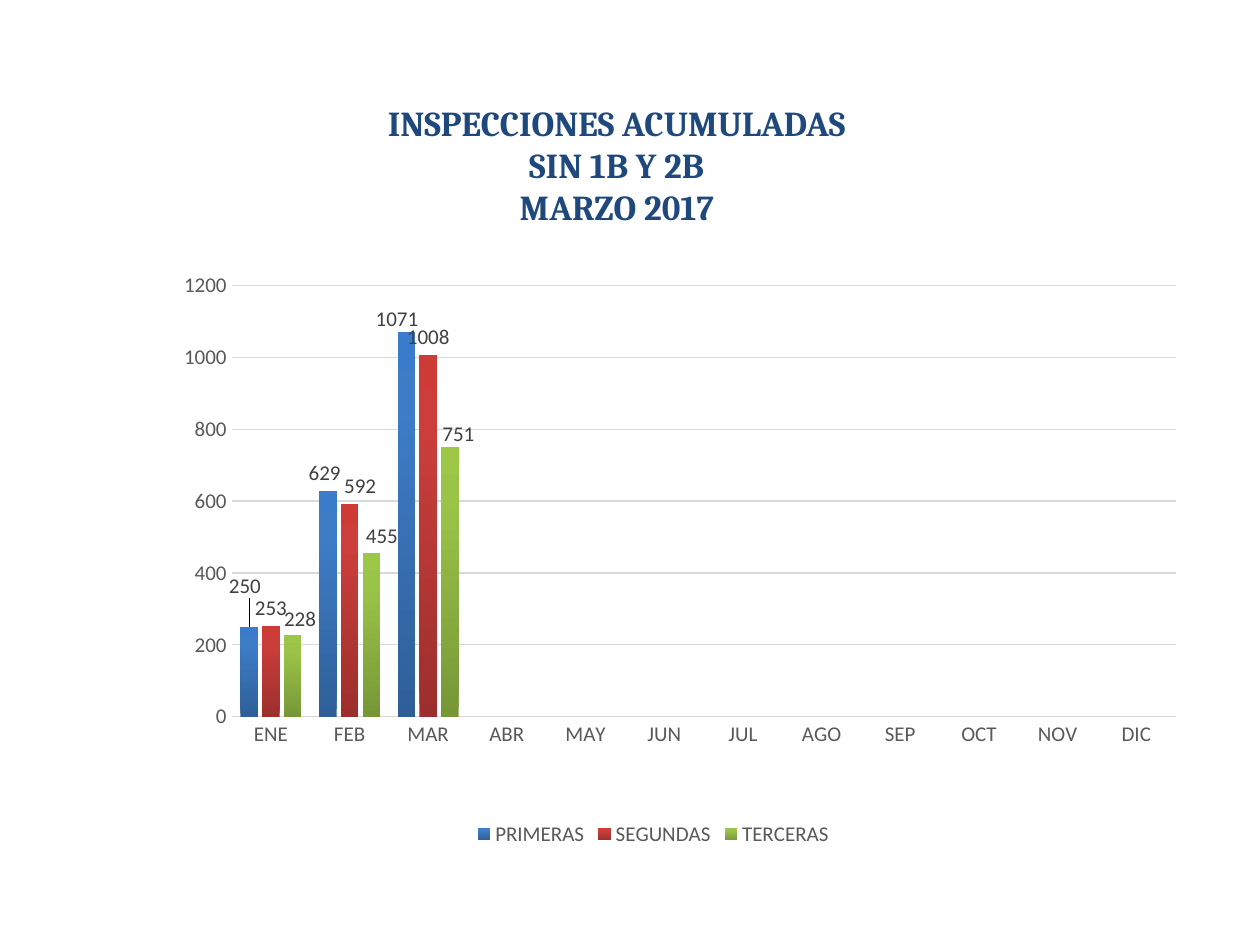
from lxml import etree
from pptx import Presentation
from pptx.chart.data import CategoryChartData
from pptx.dml.color import RGBColor
from pptx.enum.chart import XL_CHART_TYPE, XL_LABEL_POSITION, XL_LEGEND_POSITION, XL_TICK_MARK
from pptx.enum.text import PP_ALIGN
from pptx.oxml import parse_xml
from pptx.oxml.ns import nsdecls, qn
from pptx.util import Inches, Pt

COLUMN = XL_CHART_TYPE.COLUMN_CLUSTERED
OUTSIDE = XL_LABEL_POSITION.OUTSIDE_END
BOTTOM = XL_LEGEND_POSITION.BOTTOM
NO_TICK = XL_TICK_MARK.NONE
CENTER = PP_ALIGN.CENTER

COLORS = {"title": "1F497D", "axis": "595959", "label": "404040", "grid": "D9D9D9", "base": "000000"}
TITLE = ["INSPECCIONES ACUMULADAS", "SIN 1B Y 2B", "MARZO 2017"]
MONTHS = "ENE FEB MAR ABR MAY JUN JUL AGO SEP OCT NOV DIC".split()
SERIES = [
    ("PRIMERAS", [250, 629, 1071], ["2F5F99", "3D7CC7", "3A7CCB"]),
    ("SEGUNDAS", [253, 592, 1008], ["9C2F2D", "CB3E3A", "CE3B37"]),
    ("TERCERAS", [228, 455, 751], ["779737", "9BC348", "9DC746"]),
]
STOPS = [0, 80, 100]
SHIFTS = [
    [(-0.004, -0.04), (-0.003, 0), (-0.009, 0.008)],
    [(0, 0), (0.01, 0), (0, 0)],
    [(0.007, 0.004), (0.01, 0), (0.008, 0.008)],
]
PLOT = {"x": 0.102, "y": 0.036, "w": 0.891, "h": 0.734}


def style(font, color, size, name="Calibri", bold=False):
    """Set face, size, weight and colour of a font."""
    font.name, font.size, font.bold = name, Pt(size), bold
    font.color.rgb = RGBColor.from_string(COLORS[color])


def rule(line, width):
    """Give a chart line the grid colour and a width."""
    line.color.rgb = RGBColor.from_string(COLORS["grid"])
    line.width = Pt(width)


def layout(spots, inner=False):
    """Make a manual chart layout element."""
    node = parse_xml(f"<c:layout {nsdecls('c')}><c:manualLayout/></c:layout>")
    items = list(spots.items())
    if inner:
        items = [("layoutTarget", "inner"), ("xMode", "edge"), ("yMode", "edge")] + items
    for key, val in items:
        etree.SubElement(node[0], qn(f"c:{key}")).set("val", str(val))
    return node


def shade(fill, tones):
    """Fill with a gradient that rises from the bottom."""
    fill.gradient()
    fill.gradient_angle = 90
    grad = fill._xPr.find(qn("a:gradFill"))
    stops = grad.find(qn("a:gsLst"))
    for stop in list(stops):
        stops.remove(stop)
    for spot, tone in zip(STOPS, tones):
        stop = etree.SubElement(stops, qn("a:gs"), pos=str(spot * 1000))
        etree.SubElement(stop, qn("a:srgbClr"), val=tone)


def add_title(slide):
    """Add the centred heading."""
    box = slide.shapes.add_textbox(Inches(1.69), Inches(0.76), Inches(6.41), Inches(1.11))
    frame = box.text_frame
    frame.word_wrap = True
    for i, text in enumerate(TITLE):
        para = frame.paragraphs[0] if i == 0 else frame.add_paragraph()
        para.alignment = CENTER
        run = para.add_run()
        run.text = text
        style(run.font, "title", 20, "Cambria", True)


def set_axes(chart):
    """Style both axes and the grid."""
    cat, val = chart.category_axis, chart.value_axis
    for axis in (cat, val):
        axis.major_tick_mark = axis.minor_tick_mark = NO_TICK
        style(axis.tick_labels.font, "axis", 12)
    rule(cat.format.line, 1)
    val.format.line.fill.background()
    rule(val.major_gridlines.format.line, 0.75)
    val.minimum_scale, val.maximum_scale, val.major_unit = 0, 1200, 200


def set_bars(ser, tones, shifts):
    """Colour a series and place its value labels."""
    ser.invert_if_negative = False
    shade(ser.format.fill, tones)
    labels = ser.data_labels
    labels.show_value = True
    labels.position = OUTSIDE
    style(labels.font, "label", 12)
    for i, (x, y) in enumerate(shifts):
        if x or y:
            label = ser.points[i].data_label
            style(label.font, "label", 12)
            label.position = OUTSIDE
            node = labels._element.findall(qn("c:dLbl"))[-1]
            node.find(qn("c:idx")).addnext(layout({"x": x, "y": y}))


def add_chart(slide):
    """Add the monthly column chart."""
    data = CategoryChartData()
    data.categories = MONTHS
    for name, vals, _ in SERIES:
        data.add_series(name, vals + [None] * (len(MONTHS) - len(vals)))
    place = Inches(0.98), Inches(2.1), Inches(8.41), Inches(4.66)
    chart = slide.shapes.add_chart(COLUMN, *place, data).chart
    style(chart.font, "base", 10)
    chart.has_title = False
    chart.has_legend = True
    chart.legend.position = BOTTOM
    chart.legend.include_in_layout = False
    style(chart.legend.font, "axis", 12)
    set_axes(chart)
    plot = chart.plots[0]
    plot.gap_width, plot.overlap, plot.vary_by_categories = 100, -24, False
    for ser, (_, _, tones), shifts in zip(plot.series, SERIES, SHIFTS):
        set_bars(ser, tones, shifts)
    area = chart._chartSpace.chart.plotArea
    old = area.find(qn("c:layout"))
    if old is not None:
        area.remove(old)
    area.insert(0, layout(PLOT, inner=True))


def main():
    """Build and save the slide."""
    deck = Presentation()
    deck.slide_width, deck.slide_height = Inches(10), Inches(7.5)
    slide = deck.slides.add_slide(deck.slide_layouts[6])
    add_title(slide)
    add_chart(slide)
    deck.save("out.pptx")


if __name__ == "__main__":
    main()
